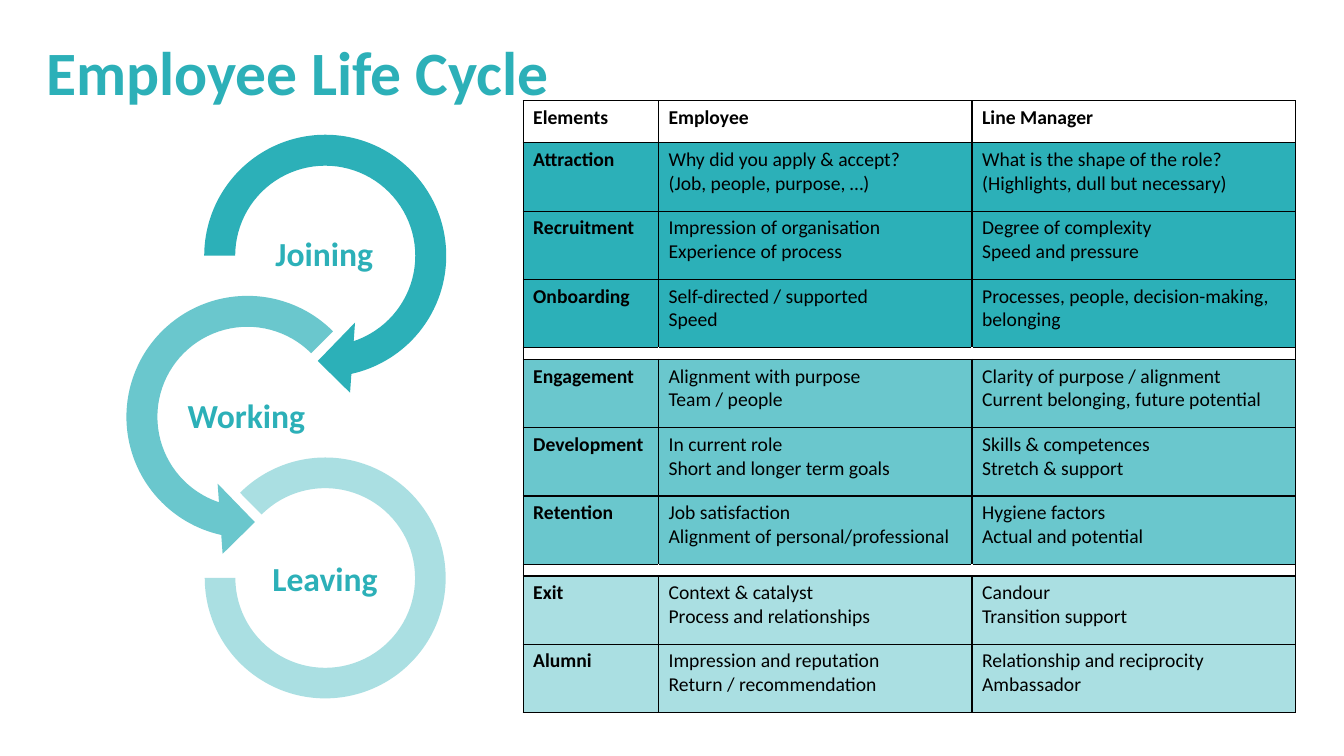
"""Build the Employee Life Cycle slide with its stage arrows and question table."""
from lxml.etree import SubElement
from pptx import Presentation
from pptx.dml.color import RGBColor
from pptx.enum.shapes import MSO_SHAPE
from pptx.enum.text import MSO_ANCHOR, PP_ALIGN
from pptx.oxml import parse_xml
from pptx.oxml.ns import nsdecls, qn
from pptx.util import Cm, Pt

TEAL = RGBColor(0x2C, 0xB0, 0xB8)
WHITE = RGBColor(0xFF, 0xFF, 0xFF)
BLACK = RGBColor(0x00, 0x00, 0x00)
FONT = "Calibri"
JOINING, WORKING, LEAVING = 100, 70, 40


def fill_teal(fill, opacity):
    fill.solid()
    fill.fore_color.rgb = TEAL
    if opacity < 100:
        color = fill._xPr.find(qn("a:solidFill"))[0]
        SubElement(color, qn("a:alpha")).set("val", str(opacity * 1000))


def add_heading(left, top, width, height, text, size, inset=None):
    box = page.shapes.add_textbox(Cm(left), Cm(top), Cm(width), Cm(height))
    frame = box.text_frame
    frame.word_wrap = True
    frame.vertical_anchor = MSO_ANCHOR.MIDDLE
    if inset is not None:
        frame.margin_left = frame.margin_right = Cm(inset)
        frame.margin_top = frame.margin_bottom = Cm(inset)
    frame.text = text
    paragraph = frame.paragraphs[0]
    paragraph.line_spacing = 0.9
    font = paragraph.runs[0].font
    font.name, font.size, font.bold = FONT, Pt(size), True
    font.color.rgb = TEAL
    return paragraph


deck = Presentation()
deck.slide_width, deck.slide_height = Cm(33.86), Cm(19.05)
page = deck.slides.add_slide(deck.slide_layouts[6])

stages = [
    ("Joining", MSO_SHAPE.CIRCULAR_ARROW, (4.65, 2.9, 7.09),
     (0.11, 11.42, 45, 108, 0.125), (6.2, 5.46), JOINING),
    ("Working", MSO_SHAPE.LEFT_CIRCULAR_ARROW, (2.69, 6.96, 7.09),
     (0.11, 11.42, 63, 189, 0.125), (4.24, 9.55), WORKING),
    ("Leaving", MSO_SHAPE.BLOCK_ARC, (5.16, 11.53, 6.07),
     (135, 108, 0.127), (6.22, 13.64), LEAVING),
]
for name, kind, (left, top, size), adjustments, label_place, opacity in stages:
    ring = page.shapes.add_shape(kind, Cm(left), Cm(top), Cm(size), Cm(size))
    for index, value in enumerate(adjustments):
        ring.adjustments[index] = value
    ring.shadow.inherit = False
    ring.line.fill.background()
    fill_teal(ring.fill, opacity)
    label = add_heading(*label_place, 3.94, 1.96, name, 24, inset=0.05)
    label.alignment = PP_ALIGN.CENTER

add_heading(0.91, 0.69, 29.2, 2.41, "Employee Life Cycle", 44)

GAP = (None, "", "", "")
rows = [
    (None, "Elements", "Employee", "Line Manager"),
    (JOINING, "Attraction", "Why did you apply & accept?\n(Job, people, purpose, …)",
     "What is the shape of the role?\n(Highlights, dull but necessary)"),
    (JOINING, "Recruitment", "Impression of organisation\nExperience of process",
     "Degree of complexity\nSpeed and pressure"),
    (JOINING, "Onboarding", "Self-directed / supported\nSpeed",
     "Processes, people, decision-making, belonging"),
    GAP,
    (WORKING, "Engagement", "Alignment with purpose\nTeam / people",
     "Clarity of purpose / alignment\nCurrent belonging, future potential"),
    (WORKING, "Development", "In current role\nShort and longer term goals",
     "Skills & competences\nStretch & support"),
    (WORKING, "Retention", "Job satisfaction\nAlignment of personal/professional",
     "Hygiene factors\nActual and potential"),
    GAP,
    (LEAVING, "Exit", "Context & catalyst\nProcess and relationships",
     "Candour\nTransition support"),
    (LEAVING, "Alumni", "Impression and reputation\nReturn / recommendation",
     "Relationship and reciprocity\nAmbassador"),
]
widths = (3.41, 7.9, 8.15)
heights = [0.29 if row is GAP else 1.72 for row in rows]
heights[0] = 1.06
table = page.shapes.add_table(len(rows), len(widths), Cm(13.18), Cm(2.54),
                              Cm(sum(widths)), Cm(sum(heights))).table
table.first_row = table.horz_banding = False
for column, width in zip(table.columns, widths):
    column.width = Cm(width)

for row_index, row in enumerate(rows):
    table.rows[row_index].height = Cm(heights[row_index])
    opacity, *texts = row
    for column_index, text in enumerate(texts):
        cell = table.cell(row_index, column_index)
        cell.text = text
        for paragraph in cell.text_frame.paragraphs:
            for span in paragraph.runs:
                span.font.name, span.font.size = FONT, Pt(14)
                span.font.bold = row_index == 0 or column_index == 0
                span.font.color.rgb = BLACK
        if opacity is None:
            cell.fill.solid()
            cell.fill.fore_color.rgb = WHITE
        else:
            fill_teal(cell.fill, opacity)
        sides = ["L", "R", "T", "B"]
        if row is GAP:
            end = SubElement(cell.text_frame.paragraphs[0]._p, qn("a:endParaRPr"))
            end.set("sz", "100")
            if column_index > 0:
                sides.remove("L")
            if column_index < len(widths) - 1:
                sides.remove("R")
        properties = cell._tc.get_or_add_tcPr()
        for position, side in enumerate(sides):
            border = parse_xml(
                f'<a:ln{side} {nsdecls("a")} w="12700"><a:solidFill>'
                f'<a:srgbClr val="{BLACK}"/></a:solidFill></a:ln{side}>')
            properties.insert(position, border)

deck.save("out.pptx")
